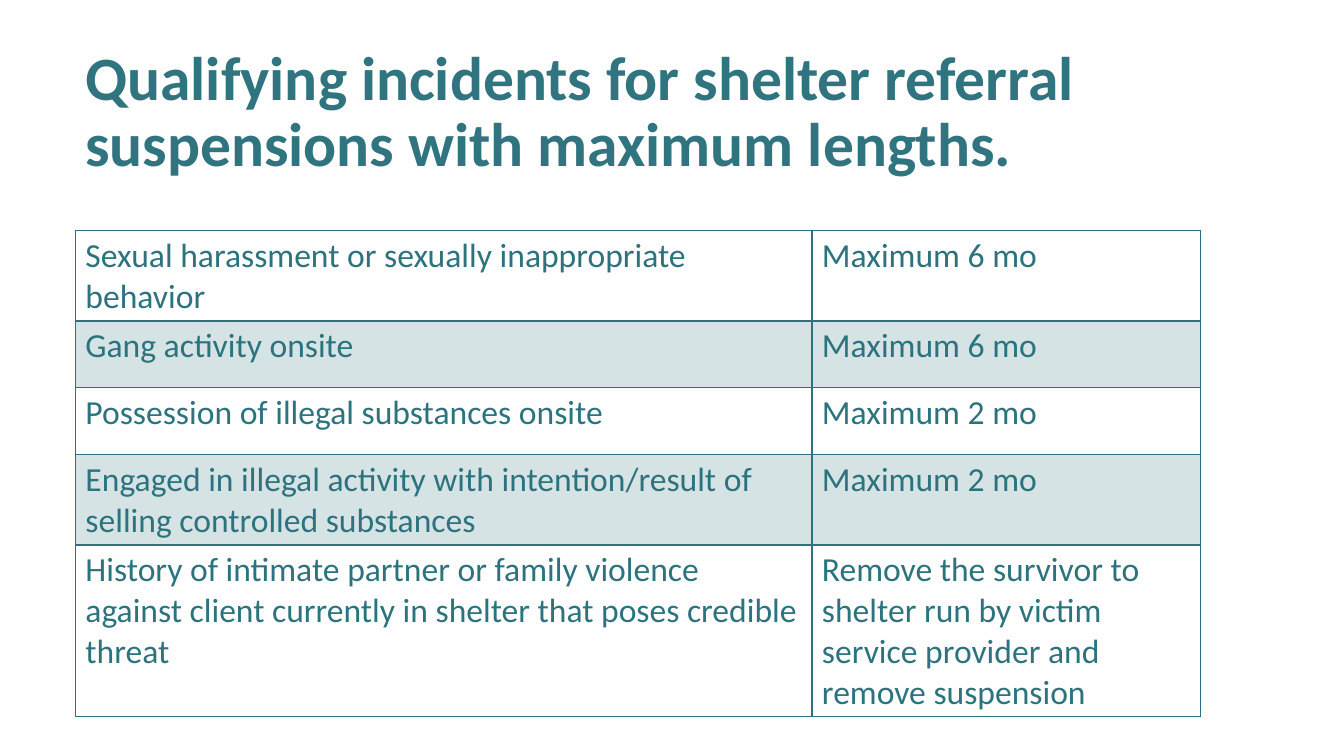
from lxml import etree
from pptx import Presentation
from pptx import util as u
from pptx.dml import color
from pptx.enum import text
from pptx.oxml import ns

TITLE = "Qualifying incidents for shelter referral suspensions with maximum lengths."
INCIDENTS = [
    ("Sexual harassment or sexually inappropriate behavior", "Maximum 6 mo"),
    ("Gang activity onsite", "Maximum 6 mo"),
    ("Possession of illegal substances onsite", "Maximum 2 mo"),
    ("Engaged in illegal activity with intention/result of selling controlled substances",
     "Maximum 2 mo"),
    ("History of intimate partner or family violence against client currently in shelter "
     "that poses credible threat",
     "Remove the survivor to shelter run by victim service provider and remove suspension"),
]
FONT = "Calibri"
TITLE_TEAL = "2F747E"
TABLE_TEAL = "2D737E"
INCIDENT_SHARE = 0.6545
ROW_HEIGHT = 1.68


def rgb(value):
    return color.RGBColor.from_string(value)


def format_text(frame, size, tint, bold=False):
    for para in frame.paragraphs:
        for span in para.runs:
            span.font.name = FONT
            span.font.size = u.Pt(size)
            span.font.bold = bold
            span.font.color.rgb = rgb(tint)


def add_title(page, left, top, width, height):
    box = page.shapes.add_textbox(u.Cm(left), u.Cm(top), u.Cm(width), u.Cm(height))
    frame = box.text_frame
    frame.word_wrap = True
    frame.vertical_anchor = text.MSO_ANCHOR.MIDDLE
    frame.text = TITLE
    frame.paragraphs[0].line_spacing = 0.9
    format_text(frame, 44, TITLE_TEAL, bold=True)


def shade(cell, tint, opacity):
    cell.fill.solid()
    cell.fill.fore_color.rgb = rgb(tint)
    swatch = cell._tc.tcPr.find(".//" + ns.qn("a:srgbClr"))
    etree.SubElement(swatch, ns.qn("a:alpha"), val=str(opacity * 1000))


def add_borders(cell, tint, width):
    properties = cell._tc.get_or_add_tcPr()
    for index, side in enumerate(("lnL", "lnR", "lnT", "lnB")):
        line = etree.Element(ns.qn("a:" + side), w=str(u.Pt(width)))
        solid = etree.SubElement(line, ns.qn("a:solidFill"))
        etree.SubElement(solid, ns.qn("a:srgbClr"), val=tint)
        properties.insert(index, line)


def add_incident_table(page, left, top, width):
    frame = page.shapes.add_table(
        len(INCIDENTS), 2, u.Cm(left), u.Cm(top), u.Cm(width),
        u.Cm(ROW_HEIGHT * len(INCIDENTS)))
    table = frame.table
    table.first_row = False
    table.horz_banding = False
    table.columns[0].width = u.Cm(width * INCIDENT_SHARE)
    table.columns[1].width = u.Cm(width * (1 - INCIDENT_SHARE))
    for row_index, incident in enumerate(INCIDENTS):
        table.rows[row_index].height = u.Cm(ROW_HEIGHT)
        for column_index, words in enumerate(incident):
            cell = table.cell(row_index, column_index)
            cell.text_frame.text = words
            format_text(cell.text_frame, 24, TABLE_TEAL)
            if row_index % 2:
                shade(cell, TABLE_TEAL, 20)
            else:
                cell.fill.background()
            add_borders(cell, TABLE_TEAL, 1)


def main():
    deck = Presentation()
    deck.slide_width = u.Cm(33.87)
    deck.slide_height = u.Cm(19.05)
    page = deck.slides.add_slide(deck.slide_layouts[6])
    add_title(page, 1.9, 1.02, 29.62, 3.68)
    add_incident_table(page, 1.9, 5.8, 28.36)
    deck.save("out.pptx")


if __name__ == "__main__":
    main()
